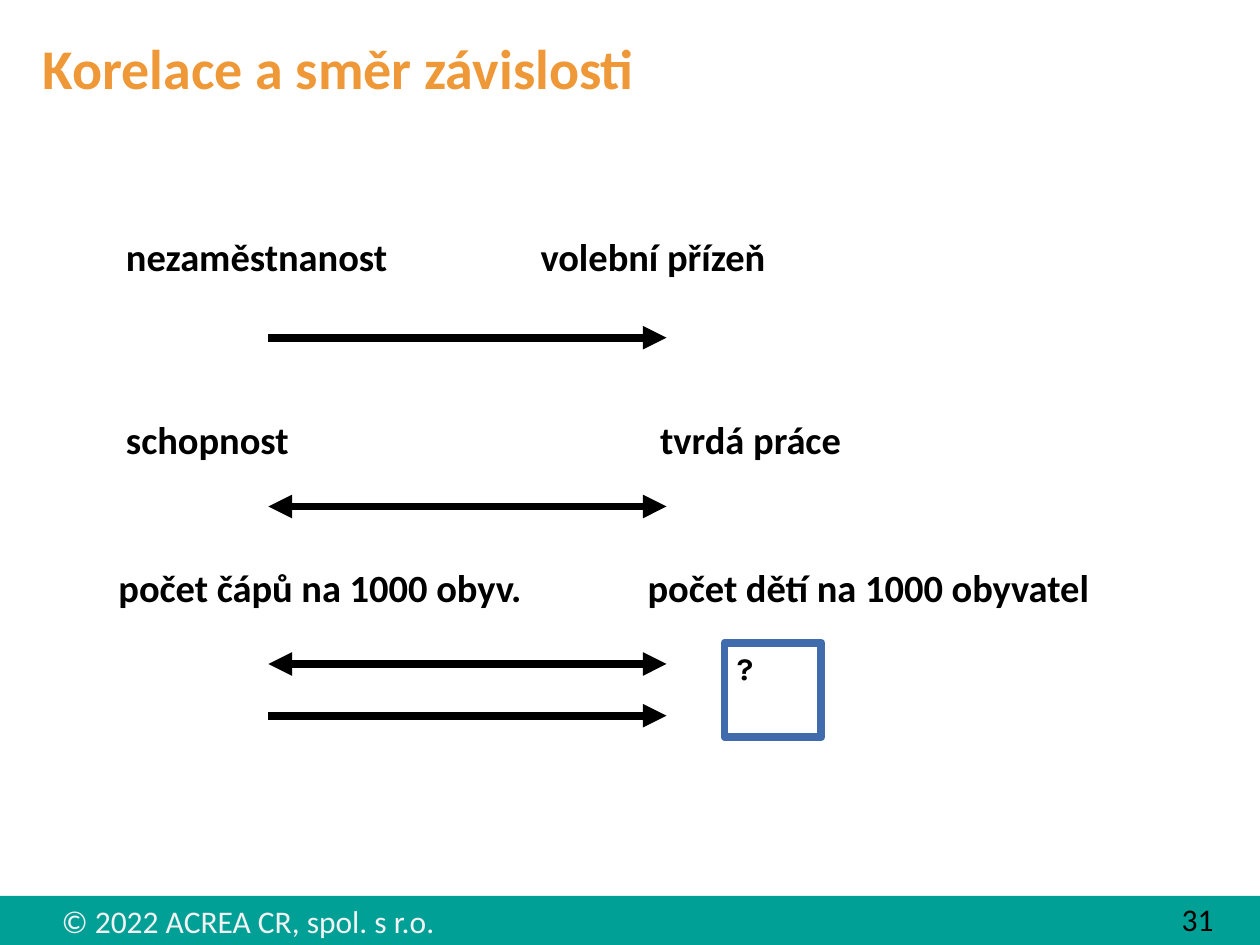
from pptx import Presentation
from pptx import util as u
from pptx.dml.color import RGBColor
from pptx.enum import shapes, text
from pptx.oxml.ns import qn
from lxml import etree

HUES = {"teal": "00A096", "pale": "F2F2F2", "gold": "EE9837",
        "black": "000000", "blue": "406CAE"}

# Content: words, box (left, top, width, height), format
TEXTS = [
    ("© 2022 ACREA CR, spol. s r.o.", (0.39, 7.11, 3.7, 0.4),
     dict(size=18, hue="pale")),
    ("Korelace a směr závislosti", (0.24, 0.24, 8.27, 0.59),
     dict(size=32, hue="gold", bold=True, anchor=text.MSO_ANCHOR.MIDDLE)),
    ("31", (9.28, 7.09, 0.72, 0.39), dict(size=18)),
    ("?", (5.75, 5.1, 0.77, 0.55), dict(size=18, bold=True, face="Karla")),
]
# Pairs: cause, effect, box, x of cause, x of effect
PAIRS = [
    ("nezaměstnanost", "volební přízeň", (0.83, 1.8, 7.47, 0.5), 1.0, 4.29),
    ("schopnost", "tvrdá práce", (0.77, 3.25, 7.47, 0.5), 1.0, 5.24),
    ("počet čápů na 1000 obyv.", "počet dětí na 1000 obyvatel",
     (0.67, 4.43, 8.73, 0.42), 0.94, 5.14),
]
# Arrows: y, points both ways
ARROWS = [(2.68, False), (4.02, True), (5.27, True), (5.68, False)]
START, END = 2.13, 5.29


def color(hue):
    return RGBColor.from_string(HUES[hue])


def place(box):
    return [u.Inches(v) for v in box]


def add_text(slide, words, box, size, hue="black", bold=False,
             face="Calibri", anchor=text.MSO_ANCHOR.TOP, inset=0.1, tab=None):
    frame = slide.shapes.add_textbox(*place(box)).text_frame
    form = dict(word_wrap=True, vertical_anchor=anchor,
                margin_left=u.Inches(inset), margin_right=0)
    for key, val in form.items():
        setattr(frame, key, val)
    para = frame.paragraphs[0]
    if tab:
        tabs = etree.SubElement(para._p.get_or_add_pPr(), qn("a:tabLst"))
        etree.SubElement(tabs, qn("a:tab"), pos=str(u.Inches(tab)), algn="l")
    run = para.add_run()
    run.text = words
    for key, val in dict(size=u.Pt(size), bold=bold, name=face).items():
        setattr(run.font, key, val)
    run.font.color.rgb = color(hue)


def add_rect(slide, box, fill=None, edge=None):
    rect = slide.shapes.add_shape(shapes.MSO_SHAPE.RECTANGLE, *place(box))
    rect.shadow.inherit = False
    for part, hue in ((rect.fill, fill), (rect.line.fill, edge)):
        if hue:
            part.solid()
            part.fore_color.rgb = color(hue)
        else:
            part.background()
    if edge:
        rect.line.width = u.Pt(4.5)


def add_arrow(slide, y, both):
    arrow = slide.shapes.add_connector(
        shapes.MSO_CONNECTOR.STRAIGHT, *place((START, y, END, y)))
    arrow.line.width = u.Pt(4.5)
    arrow.line.color.rgb = color("black")
    line = arrow.line._get_or_add_ln()
    for tip in ["headEnd", "tailEnd"] if both else ["tailEnd"]:
        etree.SubElement(line, qn("a:" + tip), type="triangle")
    etree.SubElement(arrow._element.spPr, qn("a:effectLst"))


def main():
    deck = Presentation()
    deck.slide_width, deck.slide_height = u.Inches(10), u.Inches(7.5)
    slide = deck.slides.add_slide(deck.slide_layouts[6])

    # Footer bar and question frame
    add_rect(slide, (0, 7.11, 10, 0.39), fill="teal")
    add_rect(slide, (5.75, 5.1, 0.77, 0.75), edge="blue")

    # Title, footer and question mark
    for words, box, form in TEXTS:
        add_text(slide, words, box, **form)

    # Related pairs, the effect set on a tab stop
    for cause, effect, box, left, right in PAIRS:
        add_text(slide, f"{cause}\t{effect}", box, 22, bold=True,
                 inset=left - box[0], tab=right - left)

    # Directions of dependence
    for y, both in ARROWS:
        add_arrow(slide, y, both)

    deck.save("out.pptx")


if __name__ == "__main__":
    main()
